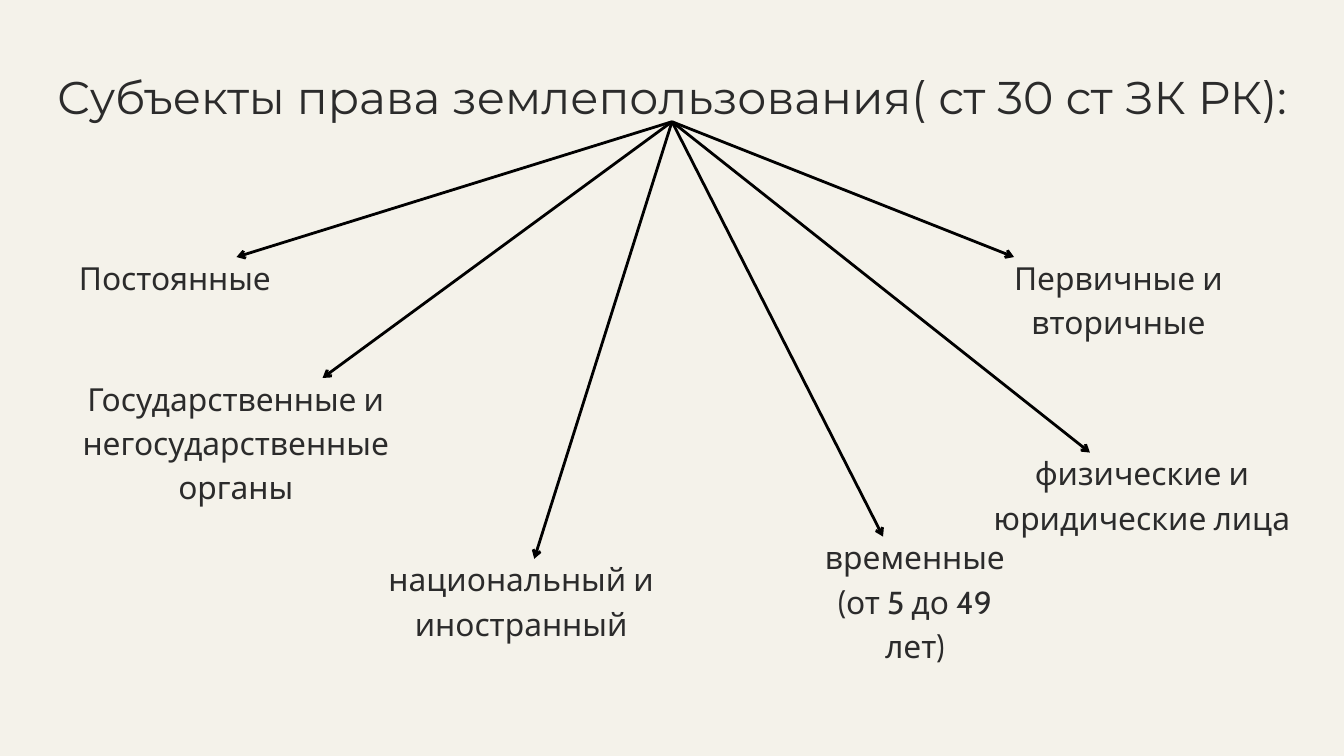
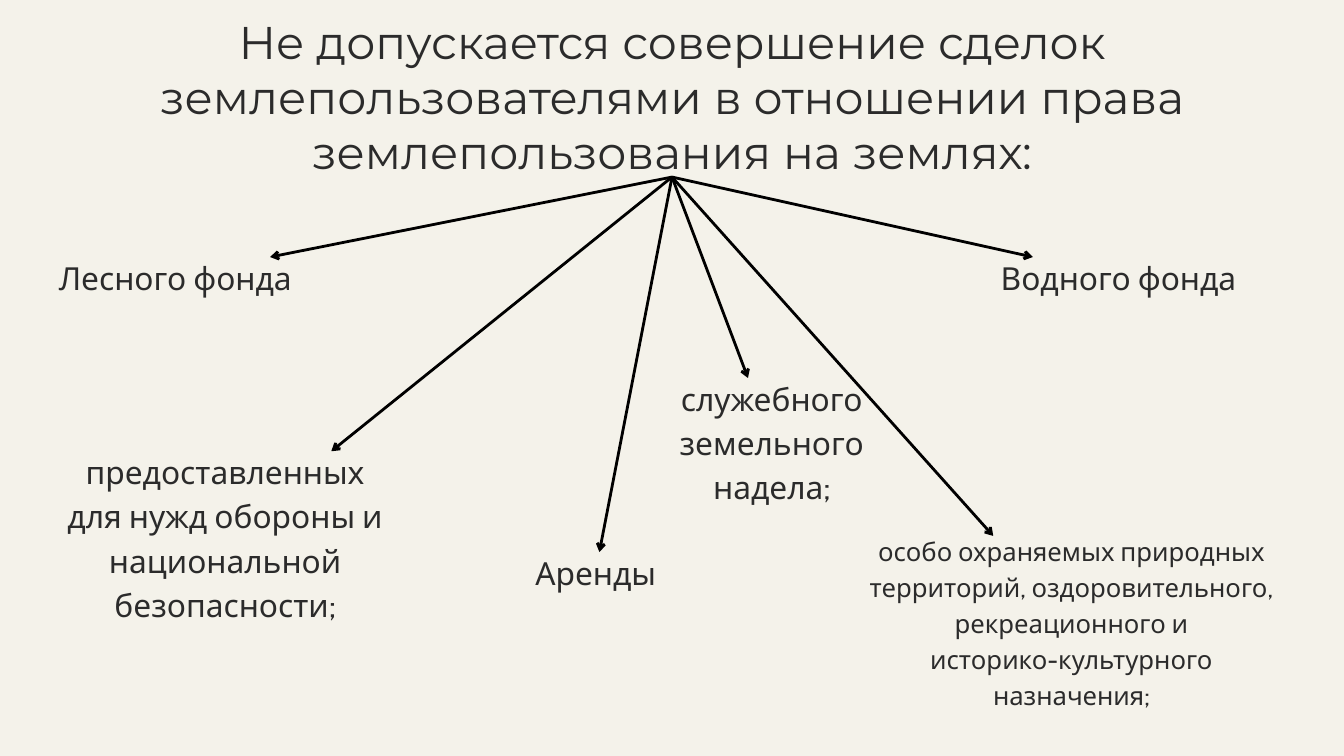
from dataclasses import dataclass

from lxml import etree
from pptx import Presentation
from pptx.dml.color import RGBColor
from pptx.enum.shapes import MSO_CONNECTOR
from pptx.enum.text import MSO_ANCHOR, MSO_AUTO_SIZE, PP_ALIGN
from pptx.oxml.ns import qn
from pptx.util import Pt

STRAIGHT = MSO_CONNECTOR.STRAIGHT
CENTER = PP_ALIGN.CENTER
TOP = MSO_ANCHOR.TOP
GROW = MSO_AUTO_SIZE.SHAPE_TO_FIT_TEXT


@dataclass(frozen=True)
class TextStyle:
    font: str
    size: float
    line_height: float


@dataclass(frozen=True)
class Theme:
    background: RGBColor = RGBColor(0xF4, 0xF2, 0xEA)
    text: RGBColor = RGBColor(0x2B, 0x2B, 0x2B)
    arrow: RGBColor = RGBColor(0, 0, 0)
    arrow_width: float = 3
    title: TextStyle = TextStyle("Montserrat", 49.1, 58.9)
    branch: TextStyle = TextStyle("Cabin", 34, 47.6)
    small_branch: TextStyle = TextStyle("Cabin", 27.5, 38.5)


@dataclass(frozen=True)
class Branch:
    text: str
    left: float
    top: float
    width: float
    lines: int
    arrow_x: float
    style: TextStyle = Theme.branch


THEME = Theme()
SLIDE_WIDTH, SLIDE_HEIGHT = 1440, 810
TITLE_WIDTH = 1328.4
BOX_TRIM = 2
ARROW_DROP = 5.4

SUBJECTS = [
    Branch("Постоянные", 80.6, 270, 213.8, 1, 253.4),
    Branch("временные (от 5 до 49 лет)", 873.4, 569.5, 213.8, 3, 946.1),
    Branch("Первичные и вторичные", 1067, 270, 262.8, 2, 1086.5),
    Branch("физические и юридические лица", 1062.7, 479.5, 321.8, 2, 1167.8),
    Branch("Государственные и негосударственные органы", 77, 399.6, 351.4, 3, 345.6),
    Branch("национальный и иностранный", 398.2, 593.3, 320.4, 2, 572.4),
]

RESTRICTED_LANDS = [
    Branch("Лесного фонда", 46.1, 270, 283.7, 1, 289.4),
    Branch("служебного земельного надела;", 720, 399.6, 213.8, 3, 801.4),
    Branch("Водного фонда", 1067, 270, 262.8, 1, 1106.6),
    Branch(
        "особо охраняемых природных территорий, оздоровительного, рекреационного и\n"
        "историко-культурного назначения;",
        911.5, 568.8, 473, 5, 1064.2, THEME.small_branch,
    ),
    Branch(
        "предоставленных для нужд обороны и национальной безопасности;",
        65.5, 478.1, 351.4, 4, 355,
    ),
    Branch("Аренды", 478.1, 586.1, 320.4, 1, 642.2),
]


def add_text(slide, text, left, top, width, lines, style):
    height = lines * style.line_height - BOX_TRIM
    shape = slide.shapes.add_textbox(Pt(left), Pt(top), Pt(width), Pt(height))
    frame = shape.text_frame
    frame.margin_left = frame.margin_top = frame.margin_right = frame.margin_bottom = 0
    frame.word_wrap = True
    frame.auto_size = GROW
    frame.vertical_anchor = TOP
    frame.text = text
    for paragraph in frame.paragraphs:
        paragraph.alignment = CENTER
        paragraph.line_spacing = Pt(style.line_height)
        paragraph.font.name = style.font
        paragraph.font.size = Pt(style.size)
        paragraph.font.color.rgb = THEME.text
    return top + height


def add_arrow(slide, start, end):
    points = [Pt(length) for length in (*start, *end)]
    connector = slide.shapes.add_connector(STRAIGHT, *points)
    connector.line.color.rgb = THEME.arrow
    connector.line.width = Pt(THEME.arrow_width)
    properties = connector.element.spPr
    etree.SubElement(properties.find(qn("a:ln")), qn("a:tailEnd"), type="arrow")
    etree.SubElement(properties, qn("a:effectLst"))


def add_branch(slide, branch, origin):
    add_text(slide, branch.text, branch.left, branch.top, branch.width,
             branch.lines, branch.style)
    add_arrow(slide, origin, (branch.arrow_x, branch.top + ARROW_DROP))


def add_fan_slide(presentation, title, title_top, title_lines, branches):
    slide = presentation.slides.add_slide(presentation.slide_layouts[6])
    slide.background.fill.solid()
    slide.background.fill.fore_color.rgb = THEME.background
    title_left = (SLIDE_WIDTH - TITLE_WIDTH) / 2
    title_bottom = add_text(slide, title, title_left, title_top, TITLE_WIDTH,
                            title_lines, THEME.title)
    for branch in branches:
        add_branch(slide, branch, (SLIDE_WIDTH / 2, title_bottom))


def main():
    presentation = Presentation()
    presentation.slide_width = Pt(SLIDE_WIDTH)
    presentation.slide_height = Pt(SLIDE_HEIGHT)
    add_fan_slide(presentation, "Субъекты права землепользования( ст 30 ст ЗК РК):",
                  73.5, 1, SUBJECTS)
    add_fan_slide(
        presentation,
        "Не допускается совершение сделок землепользователями "
        "в отношении права землепользования на землях:",
        15, 3, RESTRICTED_LANDS,
    )
    presentation.save("out.pptx")


if __name__ == "__main__":
    main()
